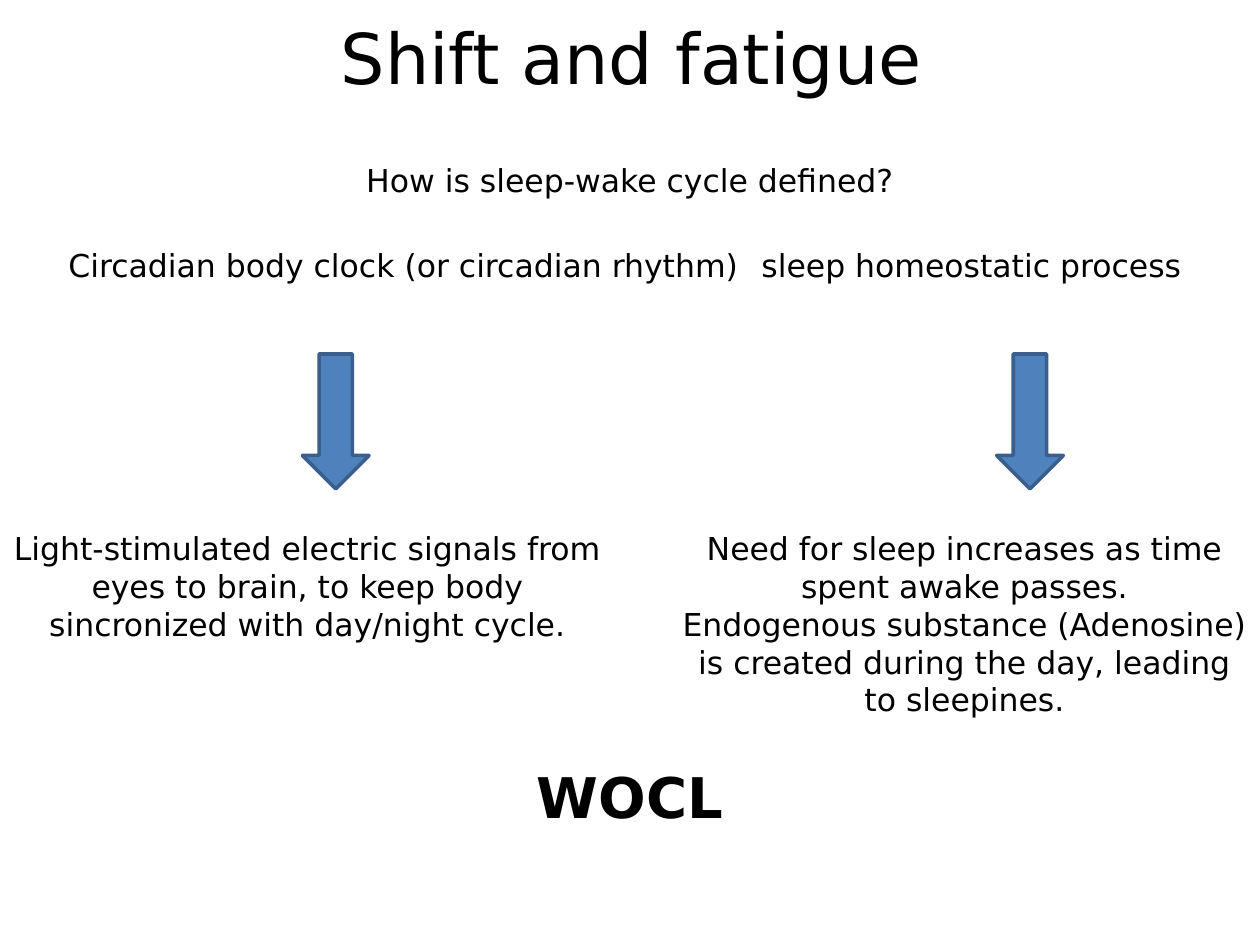
from pptx import Presentation
from pptx.dml.color import RGBColor
from pptx.enum.shapes import MSO_SHAPE
from pptx.enum.text import MSO_ANCHOR, PP_ALIGN
from pptx.util import Inches, Pt


def color(value):
    return RGBColor.from_string(value)


def write(paragraph, text, size=18, bold=False, ink="000000", font="DejaVu Sans", before=0):
    paragraph.alignment = PP_ALIGN.CENTER
    paragraph.space_before = Pt(before)
    run = paragraph.add_run()
    run.text = text
    run.font.name = font
    run.font.size = Pt(size)
    run.font.bold = bold
    run.font.color.rgb = color(ink)


class SlideBuilder:
    arrow_fill = "4F81BD"
    arrow_line = "3A5F8C"

    def __init__(self, slide):
        self.slide = slide

    def text(self, left, top, width, height, lines, gap=0, anchor=MSO_ANCHOR.TOP, **style):
        box = self.slide.shapes.add_textbox(
            Inches(left), Inches(top), Inches(width), Inches(height)
        )
        frame = box.text_frame
        frame.word_wrap = True
        frame.vertical_anchor = anchor
        for index, line in enumerate(lines):
            paragraph = frame.add_paragraph() if index else frame.paragraphs[0]
            write(paragraph, line, before=gap if index else 0, **style)

    def down_arrow(self, left, top, width=0.53, height=1.07):
        shape = self.slide.shapes.add_shape(
            MSO_SHAPE.DOWN_ARROW, Inches(left), Inches(top), Inches(width), Inches(height)
        )
        shape.shadow.inherit = False
        shape.fill.solid()
        shape.fill.fore_color.rgb = color(self.arrow_fill)
        shape.line.color.rgb = color(self.arrow_line)
        shape.line.width = Pt(2)


def main():
    presentation = Presentation()
    presentation.slide_width = Inches(10)
    presentation.slide_height = Inches(7.5)
    builder = SlideBuilder(presentation.slides.add_slide(presentation.slide_layouts[6]))

    builder.text(0.51, 0.01, 9, 0.87, ["Shift and fatigue"], size=40, anchor=MSO_ANCHOR.MIDDLE)
    builder.text(0, 1.23, 10, 2.91, [
        "How is sleep-wake cycle defined?",
        "Circadian body clock (or circadian rhythm) \tsleep homeostatic process ",
    ], gap=27)

    for left in (2.4, 7.91):
        builder.down_arrow(left, 2.81)

    builder.text(0, 4.15, 4.88, 1.01, [
        "Light-stimulated electric signals from eyes to brain, "
        "to keep body sincronized with day/night cycle.",
    ])
    builder.text(5.31, 4.15, 4.69, 1.62, [
        "Need for sleep increases as time spent awake passes.",
        "Endogenous substance (Adenosine) is created during the day, leading to sleepines.",
    ])
    builder.text(0, 6, 10, 0.64, ["WOCL"], size=32, bold=True)

    presentation.save("out.pptx")


if __name__ == "__main__":
    main()
